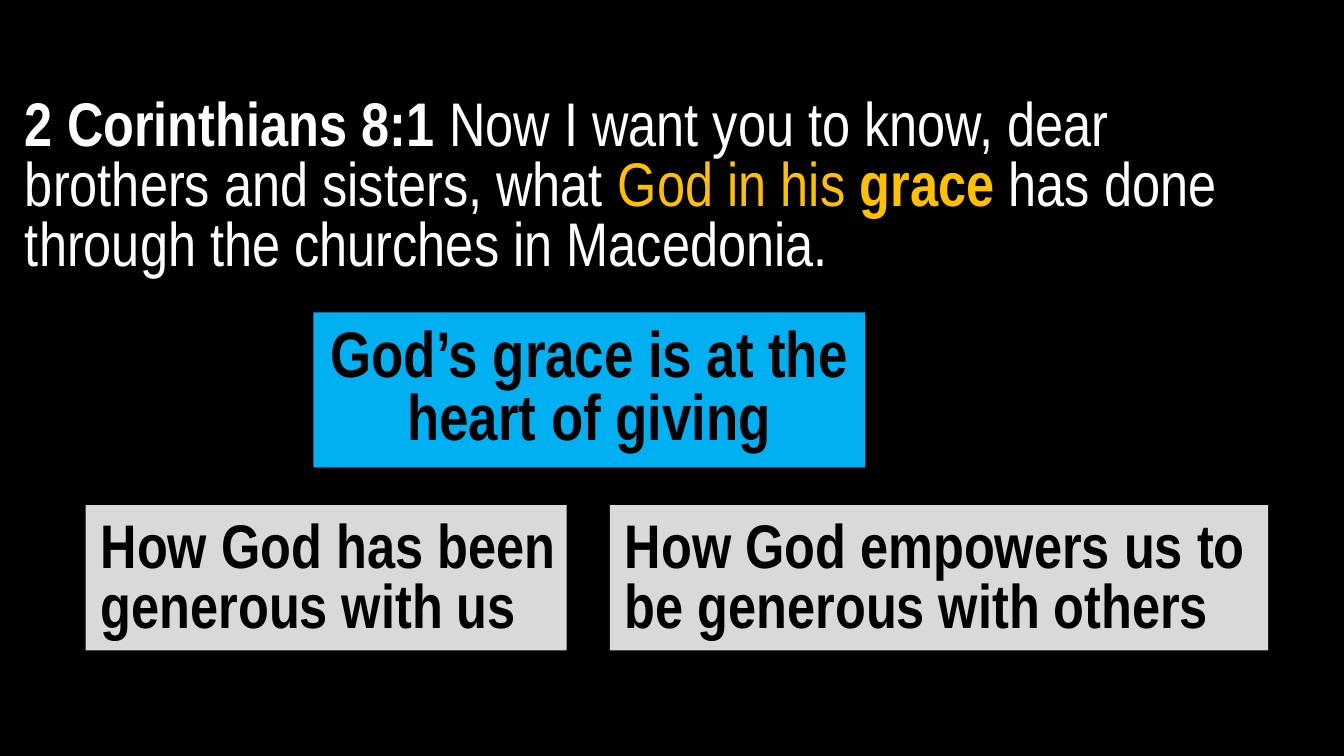
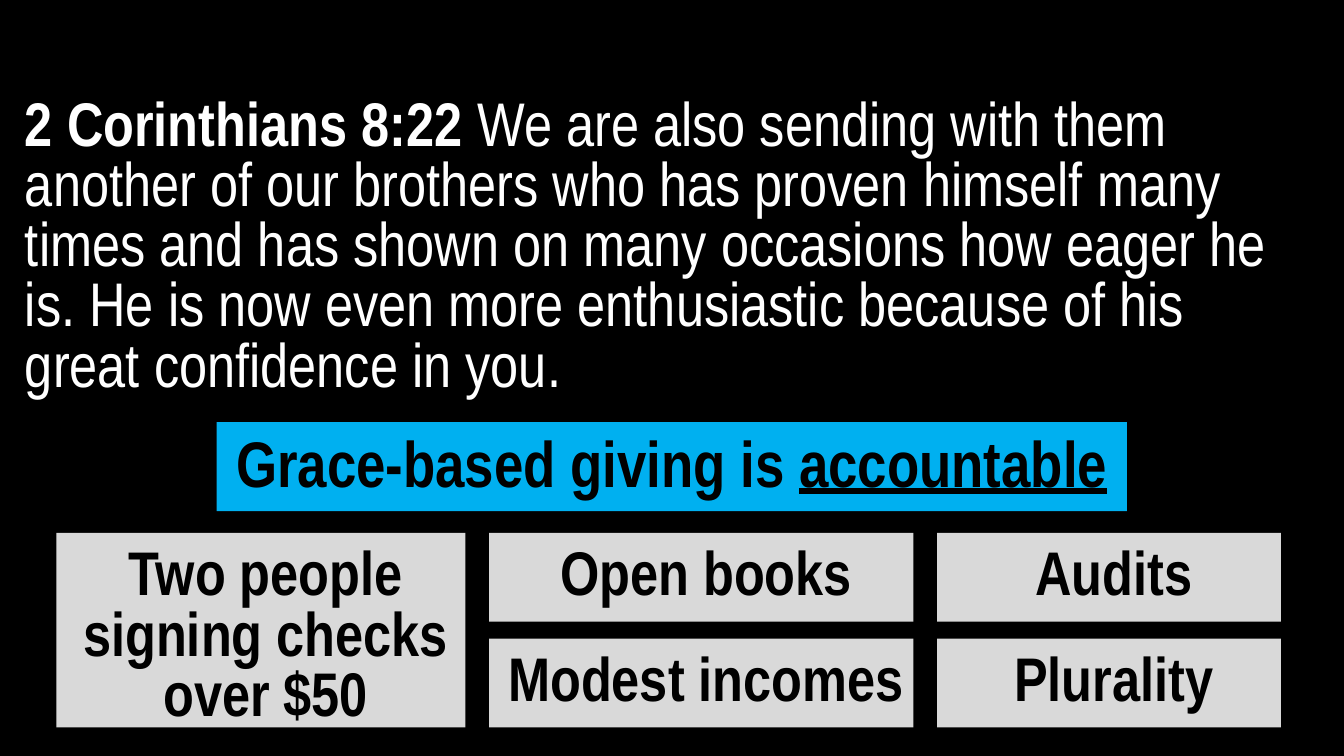
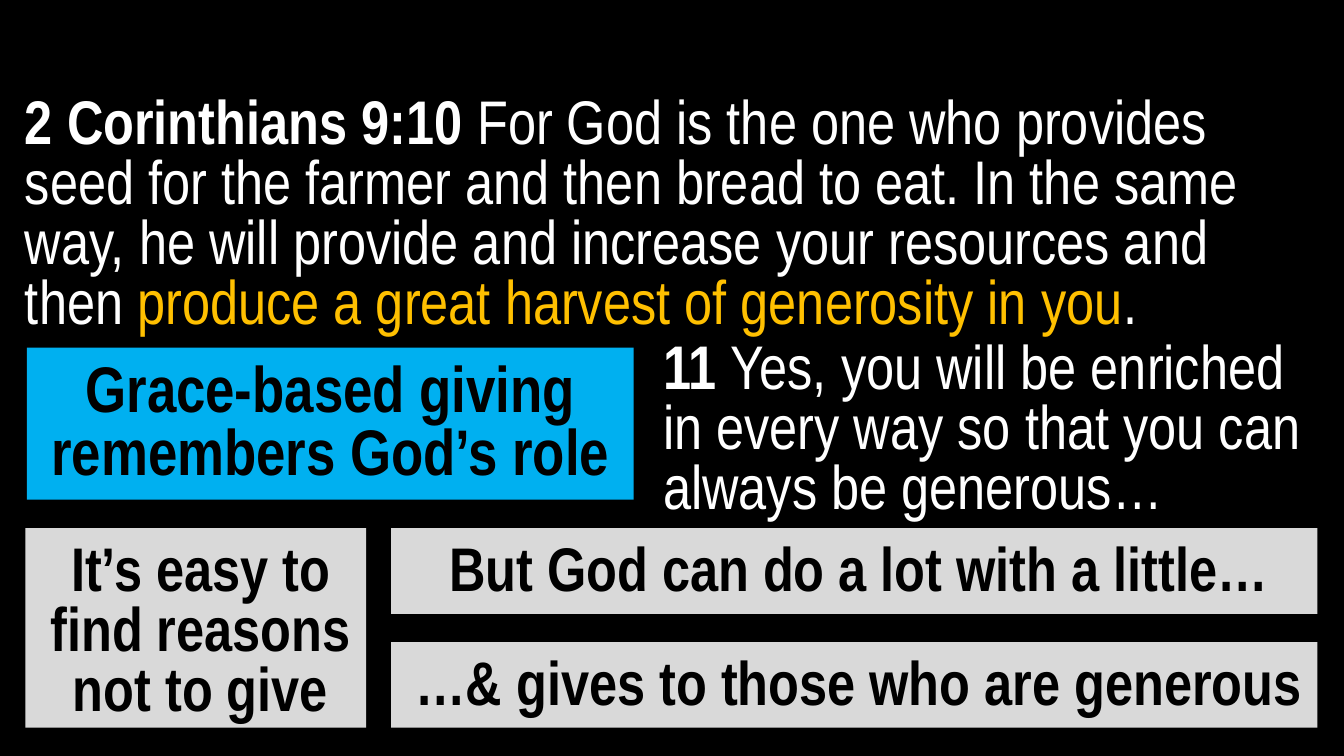
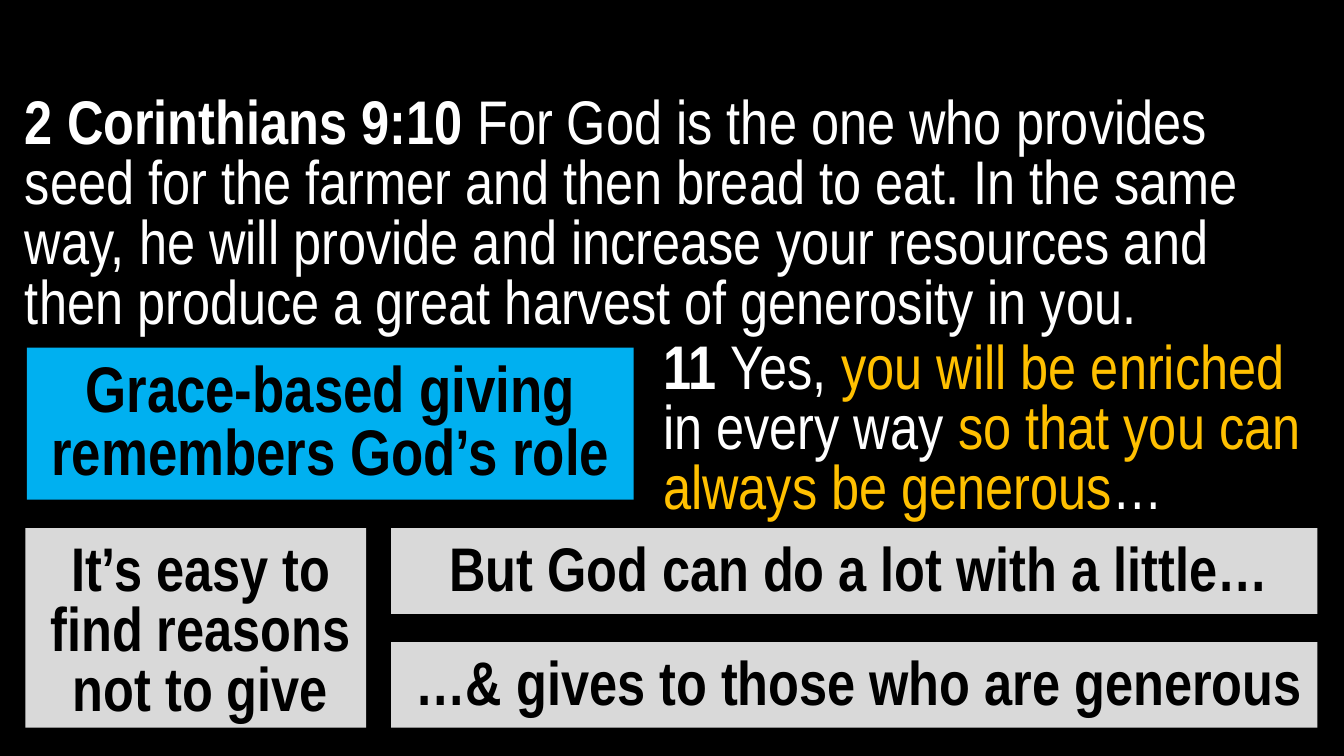
from dataclasses import dataclass

from pptx import Presentation
from pptx.dml.color import RGBColor
from pptx.enum.shapes import MSO_SHAPE
from pptx.enum.text import MSO_ANCHOR, MSO_AUTO_SIZE, PP_ALIGN
from pptx.util import Cm, Pt

RECT = MSO_SHAPE.RECTANGLE
TOP = MSO_ANCHOR.TOP
NO_FIT = MSO_AUTO_SIZE.NONE
LEFT, CENTER = PP_ALIGN.LEFT, PP_ALIGN.CENTER
TITLE_ONLY = 5


@dataclass(frozen=True)
class Theme:
    font: str = "Arial Narrow"
    black: RGBColor = RGBColor(0x00, 0x00, 0x00)
    white: RGBColor = RGBColor(0xFF, 0xFF, 0xFF)
    gold: RGBColor = RGBColor(0xFF, 0xC0, 0x00)
    blue: RGBColor = RGBColor(0x00, 0xB0, 0xF0)
    grey: RGBColor = RGBColor(0xD9, 0xD9, 0xD9)
    title_size: int = 46
    title_line: int = 45
    body_size: int = 44
    body_line: int = 43


THEME = Theme()
BOLD = {"bold": True}
GOLD = {"color": THEME.gold}


def write(tf, runs, size=THEME.body_size, line=THEME.body_line, color=THEME.black,
          bold=False, align=LEFT, insets=(0.38, 0.38, 0.13, 0.13)):
    tf.word_wrap = True
    tf.auto_size = NO_FIT
    tf.vertical_anchor = TOP
    tf.margin_left, tf.margin_top, tf.margin_right, tf.margin_bottom = map(Cm, insets)
    p = tf.paragraphs[0]
    p.alignment = align
    p.line_spacing = Pt(line)
    for text, style in runs:
        r = p.add_run()
        r.text = text
        r.font.name = THEME.font
        r.font.size = Pt(size)
        r.font.bold = style.get("bold", bold)
        r.font.underline = style.get("underline", False)
        r.font.color.rgb = style.get("color", color)


def add_passage(slide, box, runs):
    sp = slide.shapes.add_textbox(*map(Cm, box))
    write(sp.text_frame, runs, color=THEME.white, insets=(0.35, 0.13, 0.25, 0.13))


def set_headline(slide, box, runs):
    sp = slide.shapes.title
    sp.left, sp.top, sp.width, sp.height = map(Cm, box)
    sp.fill.solid()
    sp.fill.fore_color.rgb = THEME.blue
    write(sp.text_frame, runs, size=THEME.title_size, line=THEME.title_line,
          bold=True, align=CENTER, insets=(0.13, 0.38, 0.13, 0.13))


def add_point(slide, box, text, align):
    sp = slide.shapes.add_shape(RECT, *map(Cm, box))
    sp.shadow.inherit = False
    sp.fill.solid()
    sp.fill.fore_color.rgb = THEME.grey
    sp.line.fill.background()
    write(sp.text_frame, [(text, {})], bold=True, align=align)


def add_points(slide, origin, height, columns, gap_x, gap_y=0, align=CENTER):
    left, top = origin
    for width, texts in columns:
        row = (height - gap_y * (len(texts) - 1)) / len(texts)
        for i, text in enumerate(texts):
            add_point(slide, (left, top + i * (row + gap_y), width, row), text, align)
        left += width + gap_x


def new_slide(prs):
    return prs.slides.add_slide(prs.slide_layouts[TITLE_ONLY])


def heart_slide(prs):
    s = new_slide(prs)
    add_passage(s, (0.28, 2.35, 32.92, 5), [
        ("2 Corinthians 8:1 ", BOLD),
        ("Now I want you to know, dear brothers and sisters, what ", {}),
        ("God in his ", GOLD),
        ("grace ", BOLD | GOLD),
        ("has done through the churches in Macedonia.", {}),
    ])
    set_headline(s, (7.9, 7.87, 13.9, 3.91), [("God’s grace is at the heart of giving", {})])
    add_points(s, (2.16, 12.73), 3.66, [
        (12.12, ["How God has been generous with us"]),
        (16.59, ["How God empowers us to be generous with others"]),
    ], gap_x=1.09, align=LEFT)


def accountable_slide(prs):
    s = new_slide(prs)
    add_passage(s, (0.28, 2.35, 32.92, 8), [
        ("2 Corinthians 8:22 ", BOLD),
        ("We are also sending with them another of our brothers who has proven himself "
         "many times and has shown on many occasions how eager he is. He is now even more "
         "enthusiastic because of his great confidence in you.", {}),
    ])
    set_headline(s, (5.46, 10.64, 22.94, 2.24), [
        ("Grace-based giving is ", {}),
        ("accountable", {"underline": True}),
    ])
    add_points(s, (1.42, 13.43), 4.9, [
        (10.31, ["Two people signing checks over $50"]),
        (10.69, ["Open books", "Modest incomes"]),
        (8.66, ["Audits", "Plurality"]),
    ], gap_x=0.6, gap_y=0.43)


def harvest_slide(prs, harvest_style, promise_style):
    s = new_slide(prs)
    add_passage(s, (0.28, 2.3, 32.92, 6.4), [
        ("2 Corinthians 9:10", BOLD),
        (" For God is the one who provides seed for the farmer and then bread to eat. "
         "In the same way, he will provide and increase your resources and then ", {}),
        ("produce a great harvest of generosity in you", harvest_style),
        (".", {}),
    ])
    set_headline(s, (0.68, 8.76, 15.29, 3.83),
                 [("Grace-based giving remembers God’s role", {})])
    add_passage(s, (16.36, 8.48, 17.22, 4.83), [
        ("11 ", BOLD),
        ("Yes, ", {}),
        ("you will be enriched ", promise_style),
        ("in every way ", {}),
        ("so that you can always be generous", promise_style),
        ("…", {}),
    ])
    add_points(s, (0.64, 13.31), 5.03, [
        (8.59, ["It’s easy to find reasons not to give"]),
        (23.34, ["But God can do a lot with a little…", "…& gives to those who are generous"]),
    ], gap_x=0.63, gap_y=0.71)


def main():
    prs = Presentation()
    prs.slide_width, prs.slide_height = Cm(33.87), Cm(19.05)
    fill = prs.slide_master.background.fill
    fill.solid()
    fill.fore_color.rgb = THEME.black
    heart_slide(prs)
    accountable_slide(prs)
    harvest_slide(prs, harvest_style=GOLD, promise_style={})
    harvest_slide(prs, harvest_style={}, promise_style=GOLD)
    prs.save("out.pptx")


if __name__ == "__main__":
    main()
